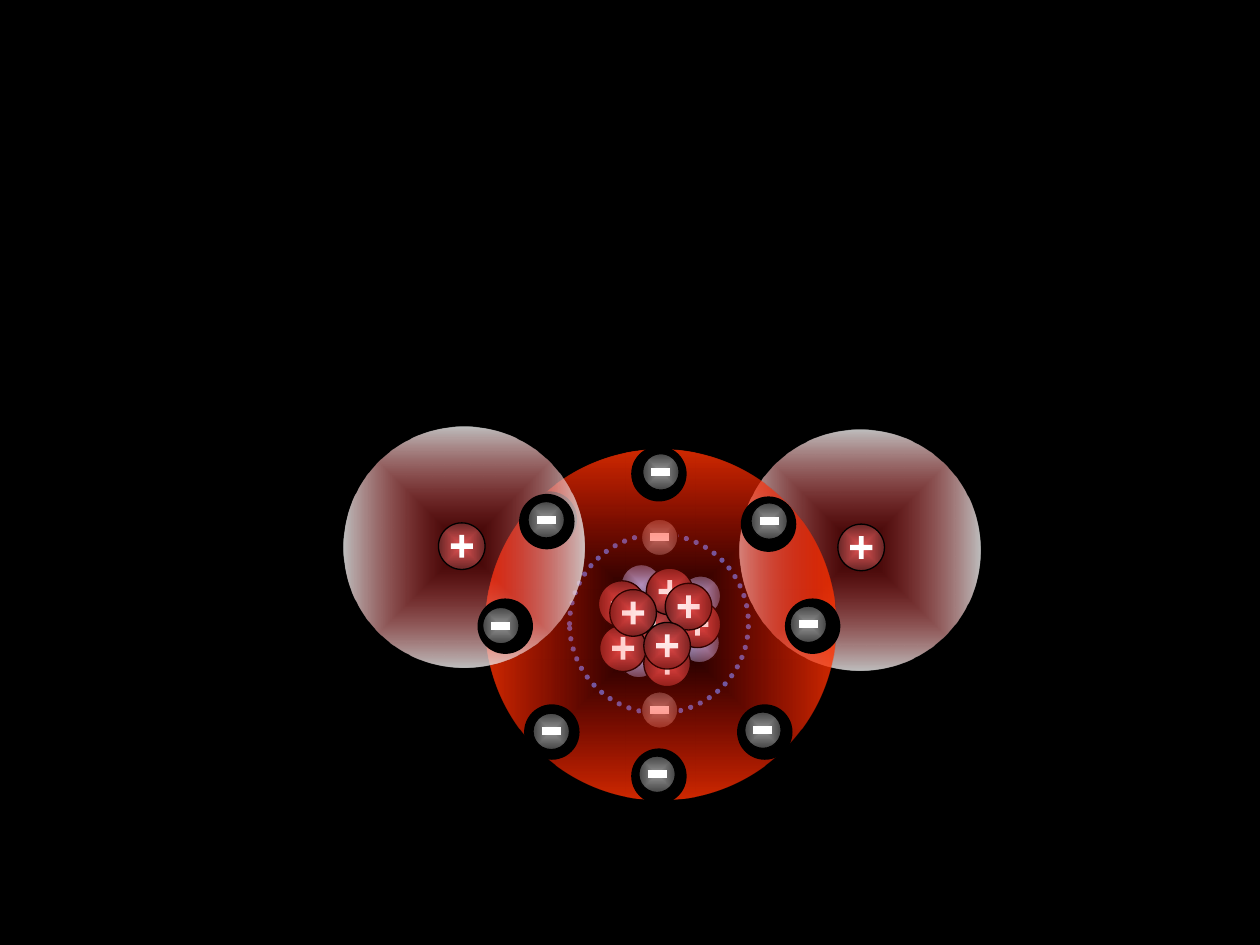
from dataclasses import dataclass
from typing import Optional

from lxml.etree import SubElement
from pptx import Presentation
from pptx.dml.color import RGBColor
from pptx.enum.dml import MSO_LINE
from pptx.enum.shapes import MSO_CONNECTOR, MSO_SHAPE
from pptx.oxml import parse_xml
from pptx.oxml.ns import nsdecls, qn
from pptx.util import Inches, Pt

COLS, ROWS = 100, 75
CELL = Inches(10) // COLS


@dataclass(frozen=True)
class Stop:
    color: str
    opacity: int = 100


@dataclass(frozen=True)
class Disc:
    """A round body: diameter in grid cells, one or two stops, optional outline."""
    size: float
    stops: tuple[Stop, ...]
    outline: Optional[str] = None


HYDROGEN = Disc(19.1, (Stop("FF0000", 20), Stop("EAEAEA", 81)))
OXYGEN = Disc(27.75, (Stop("FF0000", 0), Stop("FF3300", 81)))
PROTON = Disc(3.7, (Stop("E35353"), Stop("692626")), "000000")
NEUTRON = Disc(3.2, (Stop("A1AEE7"), Stop("4B516B")), "000000")
ELECTRON = Disc(2.9, (Stop("969696"), Stop("454545")), "000000")
HOLE = Disc(4.4, (Stop("000000"),))
INNER_SHELL = Disc(14.2, ())

# Centres in grid cells, from back to front
INNER_ELECTRONS = [(52.35, 42.65), (52.35, 56.35)]
NEUTRONS = [(50.7, 52.2), (55.6, 47.3), (55.5, 51), (50.9, 46.4)]
OXYGEN_PROTONS = [
    (51.85, 49.85), (55.35, 49.55), (52.95, 52.65),
    (49.35, 47.95), (53.15, 46.95), (49.45, 51.45),
    (54.65, 48.15), (50.25, 48.65), (52.95, 51.25),
]
OUTER_HOLES = [(52.3, 37.6), (52.3, 61.6), (43.6, 41.2), (43.8, 58.1), (60.7, 58.1)]
OUTER_ELECTRONS = [(52.45, 37.45), (52.15, 61.45), (60.55, 57.95), (43.75, 58.05)]
SHARED_PAIRS = [  # hole, electron
    ((43.4, 41.4), (43.35, 41.25)),
    ((61, 41.6), (61.05, 41.35)),
    ((40.1, 49.7), (39.75, 49.65)),
]


def rgb(color: str) -> RGBColor:
    return RGBColor.from_string(color)


def cells(n: float) -> int:
    return round(n * CELL)


def add_centred(shapes, kind, x: float, y: float, w: float, h: float):
    sp = shapes.add_shape(kind, cells(x - w / 2), cells(y - h / 2), cells(w), cells(h))
    sp.shadow.inherit = False
    sp.line.fill.background()
    return sp


def fill_from_centre(sp, stops: tuple[Stop, ...]) -> None:
    """Gradient that follows the shape outwards from its middle."""
    gs = "".join(
        f'<a:gs pos="{i * 100000}"><a:srgbClr val="{stop.color}">'
        f'<a:alpha val="{stop.opacity * 1000}"/></a:srgbClr></a:gs>'
        for i, stop in enumerate(stops))
    grad = parse_xml(
        f'<a:gradFill {nsdecls("a")} rotWithShape="1"><a:gsLst>{gs}</a:gsLst>'
        '<a:path path="shape"><a:fillToRect l="50000" t="50000" r="50000" b="50000"/>'
        '</a:path></a:gradFill>')
    sp._element.spPr.find(qn("a:prstGeom")).addnext(grad)


def add_disc(shapes, disc: Disc, x: float, y: float):
    sp = add_centred(shapes, MSO_SHAPE.OVAL, x, y, disc.size, disc.size)
    if len(disc.stops) > 1:
        fill_from_centre(sp, disc.stops)
    elif disc.stops:
        sp.fill.solid()
        sp.fill.fore_color.rgb = rgb(disc.stops[0].color)
    else:
        sp.fill.background()
    if disc.outline:
        sp.line.color.rgb = rgb(disc.outline)
        sp.line.width = Pt(0.75)
    return sp


def add_proton(shapes, x: float, y: float) -> None:
    group = shapes.add_group_shape().shapes
    add_disc(group, PROTON, x, y)
    plus = add_centred(group, MSO_SHAPE.CROSS, x, y, 1.75, 1.8)
    plus.adjustments[0] = 0.392
    plus.fill.solid()
    plus.fill.fore_color.rgb = rgb("FFFFFF")


def add_electron(shapes, x: float, y: float) -> None:
    group = shapes.add_group_shape().shapes
    add_disc(group, ELECTRON, x, y)
    minus = group.add_connector(MSO_CONNECTOR.STRAIGHT, cells(x - 0.75), cells(y),
                                cells(x + 0.75), cells(y))
    minus.line.color.rgb = rgb("FFFFFF")
    minus.line.width = Pt(4.5)
    SubElement(minus._element.spPr, qn("a:effectLst"))


def add_inner_shell(shapes, x: float, y: float) -> None:
    sp = add_disc(shapes, INNER_SHELL, x, y)
    sp.line.color.rgb = rgb("3574E5")
    sp.line.width = Pt(3)
    sp.line.dash_style = MSO_LINE.ROUND_DOT
    sp._element.spPr.find(qn("a:ln")).set("cap", "rnd")


def add_oxygen(shapes) -> None:
    add_inner_shell(shapes, 52.3, 49.5)
    for centre in INNER_ELECTRONS:
        add_electron(shapes, *centre)
    for centre in NEUTRONS:
        add_disc(shapes, NEUTRON, *centre)
    for centre in OXYGEN_PROTONS:
        add_proton(shapes, *centre)
    add_disc(shapes, OXYGEN, 52.4, 49.55)
    for centre in OUTER_HOLES:
        add_disc(shapes, HOLE, *centre)
    for centre in OUTER_ELECTRONS:
        add_electron(shapes, *centre)


def add_hydrogen(shapes, cloud: tuple[float, float], nucleus: tuple[float, float]) -> None:
    add_disc(shapes, HYDROGEN, *cloud)
    add_proton(shapes, *nucleus)


def add_electron_in_hole(shapes, hole: tuple[float, float],
                         electron: tuple[float, float]) -> None:
    add_disc(shapes, HOLE, *hole)
    add_electron(shapes, *electron)


def main() -> None:
    prs = Presentation()
    prs.slide_width, prs.slide_height = COLS * CELL, ROWS * CELL
    s = prs.slides.add_slide(prs.slide_layouts[6])
    s.background.fill.solid()
    s.background.fill.fore_color.rgb = rgb("000000")

    add_hydrogen(s.shapes, (68.25, 43.65), (68.35, 43.45))
    add_oxygen(s.shapes)
    add_electron_in_hole(s.shapes, (64.5, 49.7), (64.15, 49.55))
    add_hydrogen(s.shapes, (36.85, 43.45), (36.65, 43.35))
    for hole, electron in SHARED_PAIRS:
        add_electron_in_hole(s.shapes, hole, electron)
    prs.save("out.pptx")


if __name__ == "__main__":
    main()
